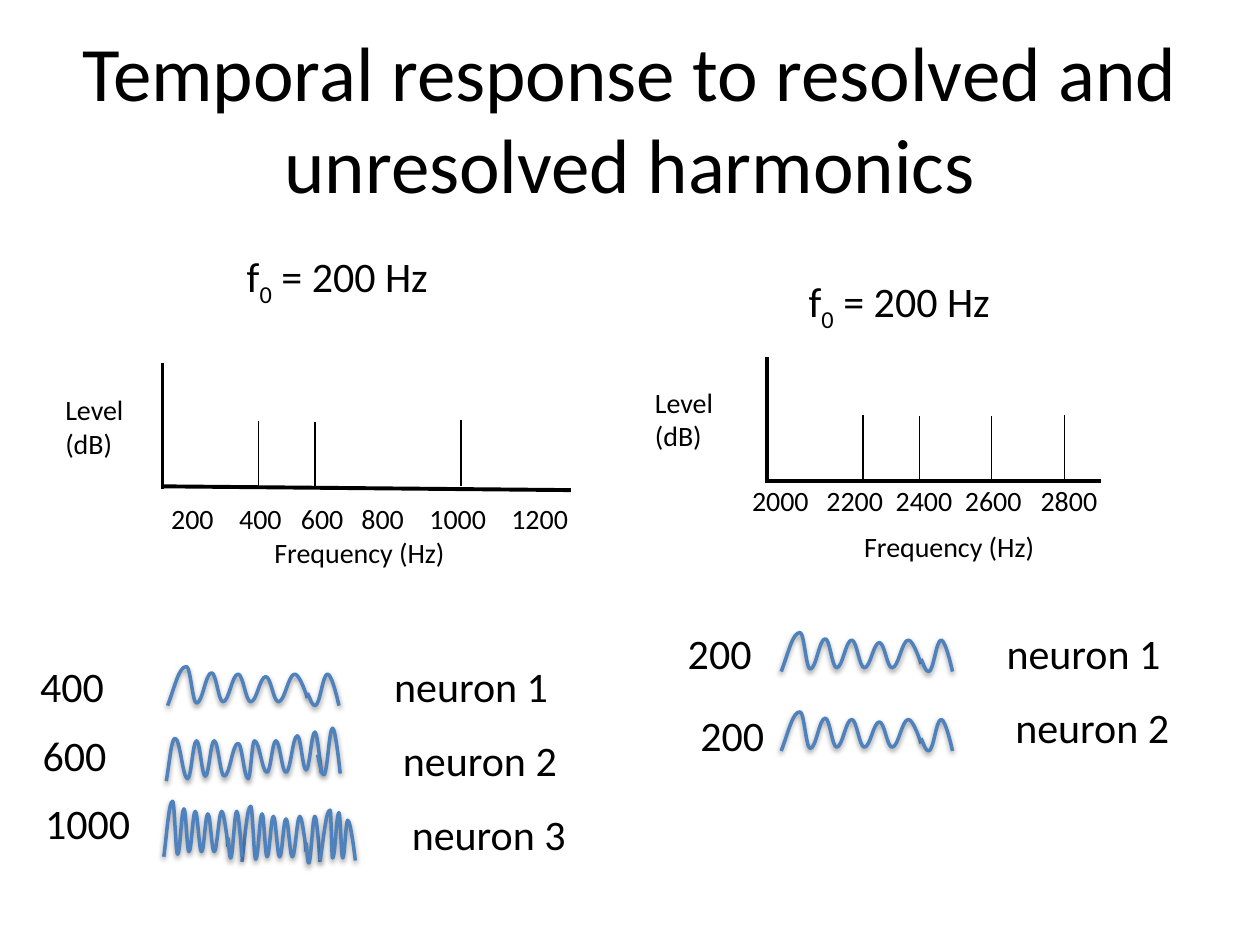
"""Build the slide on temporal response to resolved and unresolved harmonics."""
from lxml import etree
from pptx import Presentation
from pptx.dml.color import RGBColor
from pptx.enum.shapes import MSO_CONNECTOR
from pptx.enum.text import MSO_ANCHOR, PP_ALIGN
from pptx.oxml import parse_xml
from pptx.oxml.ns import nsdecls, qn
from pptx.util import Inches, Pt

LINE = MSO_CONNECTOR.STRAIGHT
MID = MSO_ANCHOR.MIDDLE
CENTER = PP_ALIGN.CENTER
COLORS = {"ink": "000000", "wave": "4F81BD"}
INK = RGBColor.from_string(COLORS["ink"])
BLUE = RGBColor.from_string(COLORS["wave"])
SHADOW = (f'<a:effectLst {nsdecls("a")}><a:outerShdw blurRad="40000" dist="20000" dir="5400000" '
          f'rotWithShape="0"><a:srgbClr val="{COLORS["ink"]}"><a:alpha val="38000"/></a:srgbClr>'
          '</a:outerShdw></a:effectLst>')

prs = Presentation()
prs.slide_width, prs.slide_height = Inches(10), Inches(7.5)
slide = prs.slides.add_slide(prs.slide_layouts[5])
shapes = slide.shapes


def style(para, size):
    for run in para.runs:
        for key, val in {"size": Pt(size), "name": "Calibri"}.items():
            setattr(run.font, key, val)
        run.font.color.rgb = INK


def label(text, left, top, width, height, size, wrap=False):
    frame = shapes.add_textbox(*map(Inches, (left, top, width, height))).text_frame
    frame.word_wrap = wrap
    frame.text = text
    for para in frame.paragraphs:
        style(para, size)
    return frame.paragraphs[0]


title = shapes.title
for key, val in {"left": 0.5, "top": 0.3, "width": 9, "height": 1.25}.items():
    setattr(title, key, Inches(val))
title.text_frame.text = "Temporal response to resolved and unresolved harmonics"
title.text_frame.vertical_anchor = MID
title.text_frame.paragraphs[0].alignment = CENTER
style(title.text_frame.paragraphs[0], 44)

plots = [
    {"axes": [(1.29, 2.88, 1.29, 3.88), (1.3, 3.86, 4.53, 3.89)],
     "bars": [(2.05, 3.34, 3.87), (2.5, 3.35, 3.87), (3.66, 3.33, 3.86)],
     "ticks": ("200\t400\t600\t800\t1000\t1200", 1.26, 3.93, 3.42),
     "tabs": [0.54, 1.03, 1.51, 2.05, 2.7],
     "level": (0.42, 3.07), "freq": (2.08, 4.2), "pitch": (1.86, 1.94, 1.75)},
    {"axes": [(6.09, 2.83, 6.09, 3.83), (6.09, 3.82, 8.74, 3.82)],
     "bars": [(6.85, 3.29, 3.82), (7.3, 3.3, 3.82), (7.87, 3.3, 3.82), (8.45, 3.29, 3.81)],
     "ticks": ("2000\t2200\t2400\t2600\t2800", 5.87, 3.79, 2.98),
     "tabs": [0.59, 1.14, 1.69, 2.29],
     "level": (5.1, 3.01), "freq": (6.76, 4.15), "pitch": (6.32, 2.14, 1.67)},
]
for plot in plots:
    rules = [(ends, 2.25) for ends in plot["axes"]]
    rules += [((x, top, x, base), 0.75) for x, top, base in plot["bars"]]
    for ends, width in rules:
        rule = shapes.add_connector(LINE, *map(Inches, ends))
        rule.line.color.rgb = INK
        rule.line.width = Pt(width)
        etree.SubElement(rule._element.spPr, qn("a:effectLst"))
    ticks = label(*plot["ticks"], 0.37, 16, True)
    stops = etree.SubElement(ticks._p.get_or_add_pPr(), qn("a:tabLst"))
    for stop in plot["tabs"]:
        etree.SubElement(stops, qn("a:tab"), pos=str(Inches(stop)), algn="l")
    label("Level\n(dB)", *plot["level"], 0.67, 0.64, 16)
    label("Frequency (Hz)", *plot["freq"], 1.6, 0.37, 16)
    pitch = label("f", *plot["pitch"], 0.5, 24)
    pitch.add_run().text = "0"
    pitch.add_run().text = " = 200 Hz"
    style(pitch, 24)
    pitch.runs[1].font._element.set("baseline", "-25000")

slow = [
    [(0, 0.31), (0.15, 0), (0.23, 0.29), (0.35, 0.05), (0.44, 0.28), (0.56, 0.06),
     (0.66, 0.28), (0.78, 0.08), (0.88, 0.28), (1.01, 0.06), (1.11, 0.25)],
    [(1.11, 0.21), (1.17, 0.31), (1.27, 0.06), (1.36, 0.31)],
]
mid = [
    [(0, 0.42), (0.07, 0.08), (0.17, 0.4), (0.24, 0.1), (0.31, 0.38), (0.38, 0.1),
     (0.46, 0.38), (0.57, 0.12), (0.65, 0.4), (0.7, 0.1), (0.8, 0.35), (0.87, 0.1),
     (0.95, 0.35), (1.04, 0.06), (1.11, 0.33), (1.18, 0.03), (1.23, 0.35)],
    [(1.2, 0.21), (1.25, 0.37), (1.32, 0), (1.38, 0.36)],
]
fast = [
    [(0, 0.45), (0.07, 0.01), (0.11, 0.43), (0.16, 0.07), (0.2, 0.41), (0.25, 0.09),
     (0.3, 0.41), (0.35, 0.11), (0.4, 0.41), (0.46, 0.09), (0.51, 0.37)],
    [(0.51, 0.3), (0.53, 0.46), (0.58, 0.09), (0.62, 0.45)],
]
last = [[(0, 0.41), (0.08, 0.01), (0.1, 0.39), (0.15, 0.03), (0.18, 0.39),
         (0.22, 0.09), (0.28, 0.41)]]
waves = [(slow, 1.33, 5.29), (mid, 1.32, 5.78), (fast, 1.92, 6.39), (last, 2.54, 6.42),
         (fast, 1.3, 6.35), (slow, 6.2, 5.65), (slow, 6.2, 5.02)]
for parts, left, top in waves:
    for turns in parts:
        dots = [(Inches(left + x), Inches(top + y)) for x, y in turns]
        pen = shapes.build_freeform(*dots[0])
        pen.add_line_segments(dots[1:], close=False)
        wave = pen.convert_to_shape()
        wave.fill.background()
        wave.line.color.rgb = BLUE
        wave.line.width = Pt(2)
        wave._element.spPr.append(parse_xml(SHADOW))
        spots = [(int(pt.get("x")), int(pt.get("y"))) for pt in wave._element.iter(qn("a:pt"))]
        legs = list(wave._element.iter(qn("a:lnTo")))
        for i, (leg, (x0, y0), (x1, y1)) in enumerate(zip(legs, spots, spots[1:])):
            bend = 0.4 * (x1 - x0)
            first = (x0 + bend, (y0 + y1) / 2 if i == 0 else y0)
            second = (x1, y1) if leg is legs[-1] else (x1 - bend, y1)
            leg.tag = qn("a:cubicBezTo")
            for k, (x, y) in enumerate([first, second]):
                pt = etree.Element(qn("a:pt"), x=str(round(x)), y=str(round(y)))
                leg.insert(k, pt)

rates = [("400", 0.22, 5.19, 0.71), ("600", 0.24, 5.74, 0.71), ("1000", 0.26, 6.28, 0.88),
         ("200", 5.36, 4.93, 0.71), ("200", 5.46, 5.58, 0.71)]
for rate in rates:
    label(*rate, 0.5, 24)
for left, top, count in [(3.03, 5.19, 3), (7.89, 4.93, 2)]:
    for i in range(count):
        label(f"neuron {i + 1}", left + 0.07 * i, top + 0.59 * i, 1.44, 0.5, 24)

prs.save("out.pptx")
